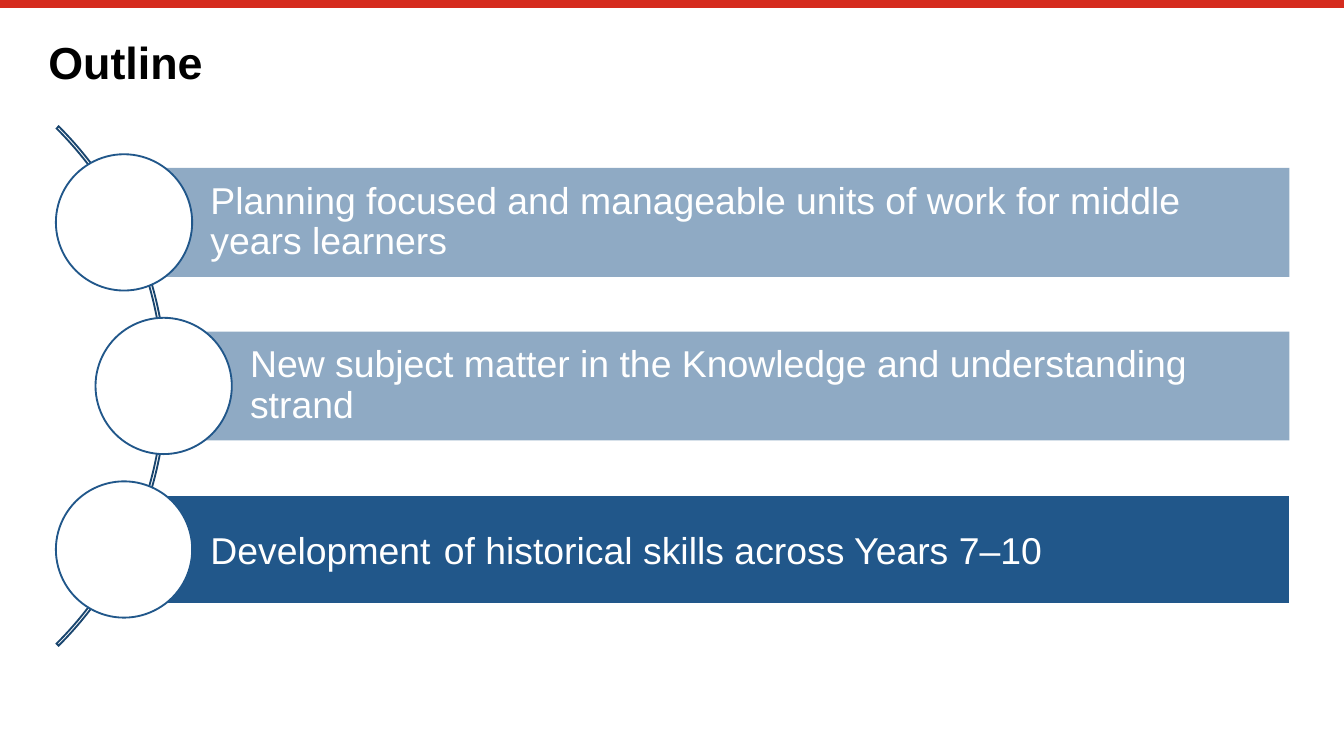
from dataclasses import dataclass

from lxml.etree import SubElement
from pptx import Presentation
from pptx.dml.color import RGBColor
from pptx.enum.shapes import MSO_CONNECTOR as Connector, MSO_SHAPE as Shape
from pptx.enum.text import MSO_ANCHOR as Anchor, PP_ALIGN as Align
from pptx.oxml.ns import qn
from pptx.util import Inches, Pt

COLORS = {
    "band": "D52B1E",
    "title": "000000",
    "white": "FFFFFF",
    "blue": "21578A",
    "arc": "1A466F",
}
FONT = "Arial"
CELL = 0.1
COLUMNS, ROWS = 100, 56.25
RIGHT_EDGE = 95.95
BAR_ROWS = 8.1
CIRCLE_CELLS = 10.14
FIRST_CENTER, CENTER_STEP = 16.55, 12.17


@dataclass(frozen=True)
class Span:
    text: str
    size: float = 20


@dataclass(frozen=True)
class Topic:
    center_column: float
    spans: tuple[Span, ...]
    current: bool = False


TOPICS = (
    Topic(9.23, (Span("Planning focused and manageable units of work for middle years learners"),)),
    Topic(12.18, (Span("New subject matter in the Knowledge and understanding strand"),)),
    Topic(
        9.23,
        (Span("Development"), Span(" ", 25), Span("of historical skills across Years 7–10")),
        current=True,
    ),
)


def grid(cells: float) -> int:
    return Inches(cells * CELL)


def color(name: str) -> RGBColor:
    return RGBColor.from_string(COLORS[name])


def add_shape(page, kind, left: float, top: float, width: float, height: float,
              fill: str | None = None, line: str | None = None):
    shape = page.shapes.add_shape(kind, grid(left), grid(top), grid(width), grid(height))
    shape.shadow.inherit = False
    if fill:
        shape.fill.solid()
        shape.fill.fore_color.rgb = color(fill)
    else:
        shape.fill.background()
    if line:
        shape.line.color.rgb = color(line)
        shape.line.width = Pt(1)
        SubElement(shape.line._get_or_add_ln(), qn("a:miter"), lim="800000")
    else:
        shape.line.fill.background()
    return shape


def write(box, spans: tuple[Span, ...], ink: str, margins: tuple[float, ...],
          anchor=Anchor.MIDDLE, bold: bool = False) -> None:
    frame = box.text_frame
    frame.word_wrap = True
    frame.vertical_anchor = anchor
    frame.margin_left, frame.margin_top, frame.margin_right, frame.margin_bottom = map(grid, margins)
    para = frame.paragraphs[0]
    para.alignment = Align.LEFT
    para.line_spacing = 0.9
    for span in spans:
        run = para.add_run()
        run.text = span.text
        run.font.name = FONT
        run.font.size = Pt(span.size)
        run.font.bold = bold
        run.font.color.rgb = color(ink)


def add_band(page) -> None:
    band = page.shapes.add_connector(Connector.STRAIGHT, 0, grid(0.3), grid(COLUMNS), grid(0.3))
    band.line.color.rgb = color("band")
    band.line.width = Pt(4.2)
    SubElement(band._element.spPr, qn("a:effectLst"))


def add_title(page, text: str) -> None:
    box = page.shapes.add_textbox(grid(3.6), grid(3), grid(92.9), grid(3.9))
    write(box, (Span(text, 24),), "title", (0, 0, 0, 0), Anchor.TOP, bold=True)


def add_arc(page) -> None:
    arc = add_shape(page, Shape.BLOCK_ARC, -42.27, 1.4, 54.64, 54.64, line="arc")
    for index, value in enumerate((189, 27, 0.004)):
        arc.adjustments[index] = value


def add_topic(page, topic: Topic, center_row: float) -> None:
    left = topic.center_column
    bar = add_shape(page, Shape.RECTANGLE, left, center_row - BAR_ROWS / 2,
                    RIGHT_EDGE - left, BAR_ROWS, "blue", "white" if topic.current else None)
    if not topic.current:
        tint = bar.fill._xPr.find(qn("a:solidFill"))[0]
        SubElement(tint, qn("a:alpha"), val="50000")
    write(bar, topic.spans, "white", (6.43, 0.6, 0.6, 0.6))
    radius = CIRCLE_CELLS / 2
    add_shape(page, Shape.OVAL, left - radius, center_row - radius,
              CIRCLE_CELLS, CIRCLE_CELLS, "white", "blue")


def main() -> None:
    deck = Presentation()
    deck.slide_width, deck.slide_height = grid(COLUMNS), grid(ROWS)
    page = deck.slides.add_slide(deck.slide_layouts[6])
    add_band(page)
    add_title(page, "Outline")
    add_arc(page)
    for index, topic in enumerate(TOPICS):
        add_topic(page, topic, FIRST_CENTER + index * CENTER_STEP)
    deck.save("out.pptx")


if __name__ == "__main__":
    main()
